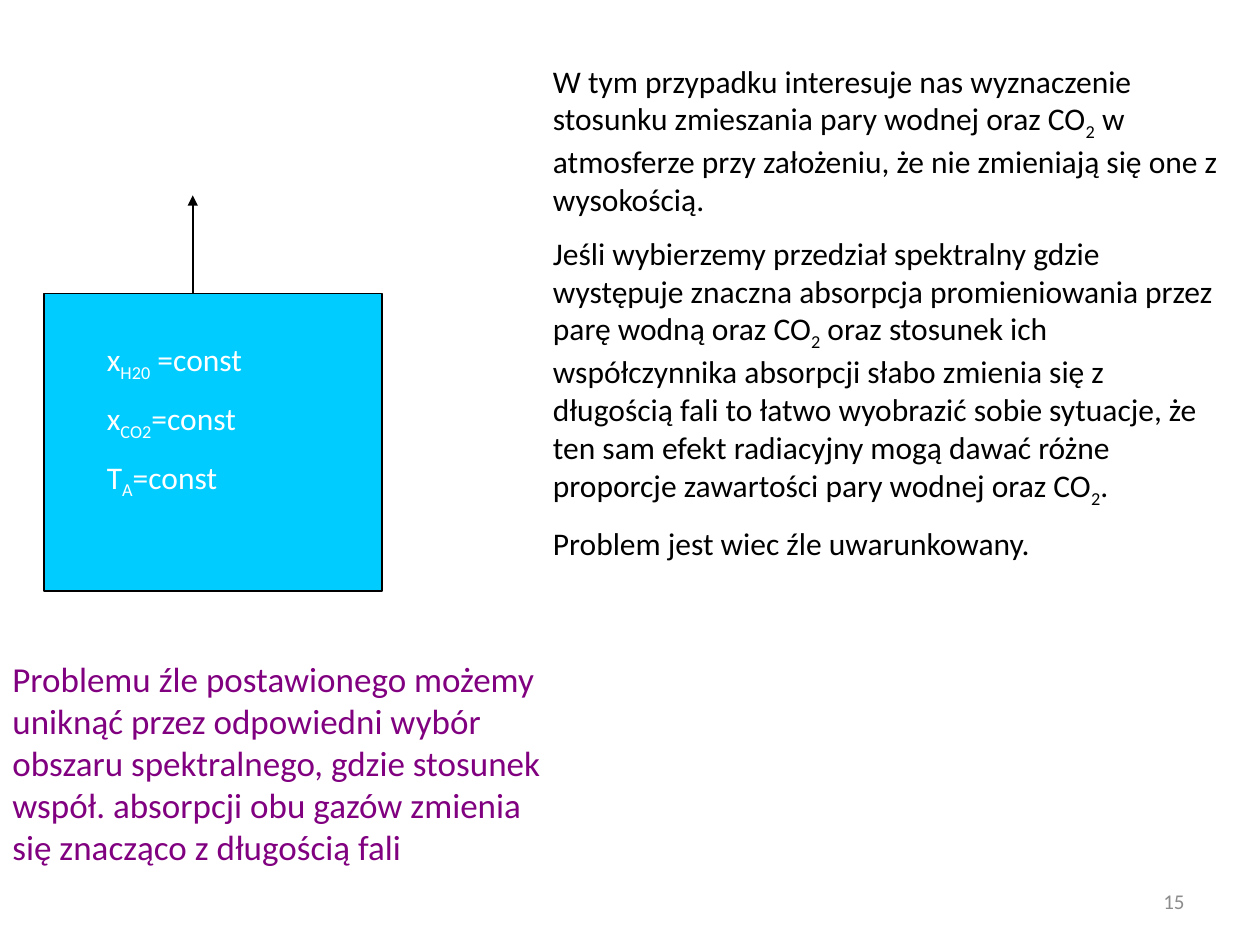
from lxml import etree
from pptx import Presentation
from pptx import util as u
from pptx.dml.color import RGBColor
from pptx.enum import shapes, text
from pptx.oxml.ns import qn

COLORS = {"black": "000000", "white": "FFFFFF", "sky": "00CCFF",
          "purple": "800080", "gray": "8C8C8C"}


def color(name):
    return RGBColor.from_string(COLORS[name])


def add_text(slide, left, top, width, height, paragraphs, size, ink):
    """Parts between underscores are set as subscripts."""
    box = slide.shapes.add_textbox(u.Inches(left), u.Inches(top),
                                   u.Inches(width), u.Inches(height))
    frame = box.text_frame
    frame.word_wrap = True
    for i, content in enumerate(paragraphs):
        paragraph = frame.add_paragraph() if i else frame.paragraphs[0]
        if i:
            paragraph.space_before = u.Pt(size / 2)
        for j, part in enumerate(content.split("_")):
            run = paragraph.add_run()
            run.text = part
            run.font.name = "Calibri"
            run.font.size = u.Pt(size)
            run.font.color.rgb = color(ink)
            if j % 2:
                run.font._element.set("baseline", "-25000")
    return frame


prs = Presentation()
prs.slide_width = u.Inches(10)
prs.slide_height = u.Inches(7.5)
slide = prs.slides.add_slide(prs.slide_layouts[6])

page_number = add_text(slide, 7.17, 6.95, 2.33, 0.4, ["15"], 12, "gray")
page_number.vertical_anchor = text.MSO_ANCHOR.MIDDLE
page_number.paragraphs[0].alignment = text.PP_ALIGN.RIGHT

atmosphere = slide.shapes.add_shape(shapes.MSO_SHAPE.RECTANGLE, u.Inches(0.35),
                                    u.Inches(2.33), u.Inches(2.68), u.Inches(2.36))
atmosphere.shadow.inherit = False
atmosphere.fill.solid()
atmosphere.fill.fore_color.rgb = color("sky")
atmosphere.line.color.rgb = color("black")
atmosphere.line.width = u.Pt(1)

add_text(slide, 0.75, 2.65, 1.97, 1.7,
         ["x_H20_ =const", "x_CO2_=const", "T_A_=const"], 18, "white")

radiation = slide.shapes.add_connector(shapes.MSO_CONNECTOR.STRAIGHT, u.Inches(1.53),
                                       u.Inches(2.33), u.Inches(1.53), u.Inches(1.55))
radiation.line.color.rgb = color("black")
radiation.line.width = u.Pt(1)
etree.SubElement(radiation.line._get_or_add_ln(), qn("a:tailEnd"), type="triangle")
etree.SubElement(radiation._element.spPr, qn("a:effectLst"))

add_text(slide, 4.29, 0.44, 5.51, 6.49, [
    "W tym przypadku interesuje nas wyznaczenie stosunku zmieszania pary wodnej "
    "oraz CO_2_ w atmosferze przy założeniu, że nie zmieniają się one z wysokością.",
    "Jeśli wybierzemy przedział spektralny gdzie występuje znaczna absorpcja "
    "promieniowania przez parę wodną oraz CO_2_ oraz stosunek ich współczynnika "
    "absorpcji słabo zmienia się z długością fali to łatwo wyobrazić sobie sytuacje, "
    "że ten sam efekt radiacyjny mogą dawać różne proporcje zawartości pary wodnej "
    "oraz CO_2_.",
    "Problem jest wiec źle uwarunkowany.",
], 18, "black")

add_text(slide, 0, 5.17, 4.45, 1.78, [
    "Problemu źle postawionego możemy uniknąć przez odpowiedni wybór obszaru "
    "spektralnego, gdzie stosunek współ. absorpcji obu gazów zmienia się znacząco "
    "z długością fali",
], 20, "purple")

prs.save("out.pptx")
